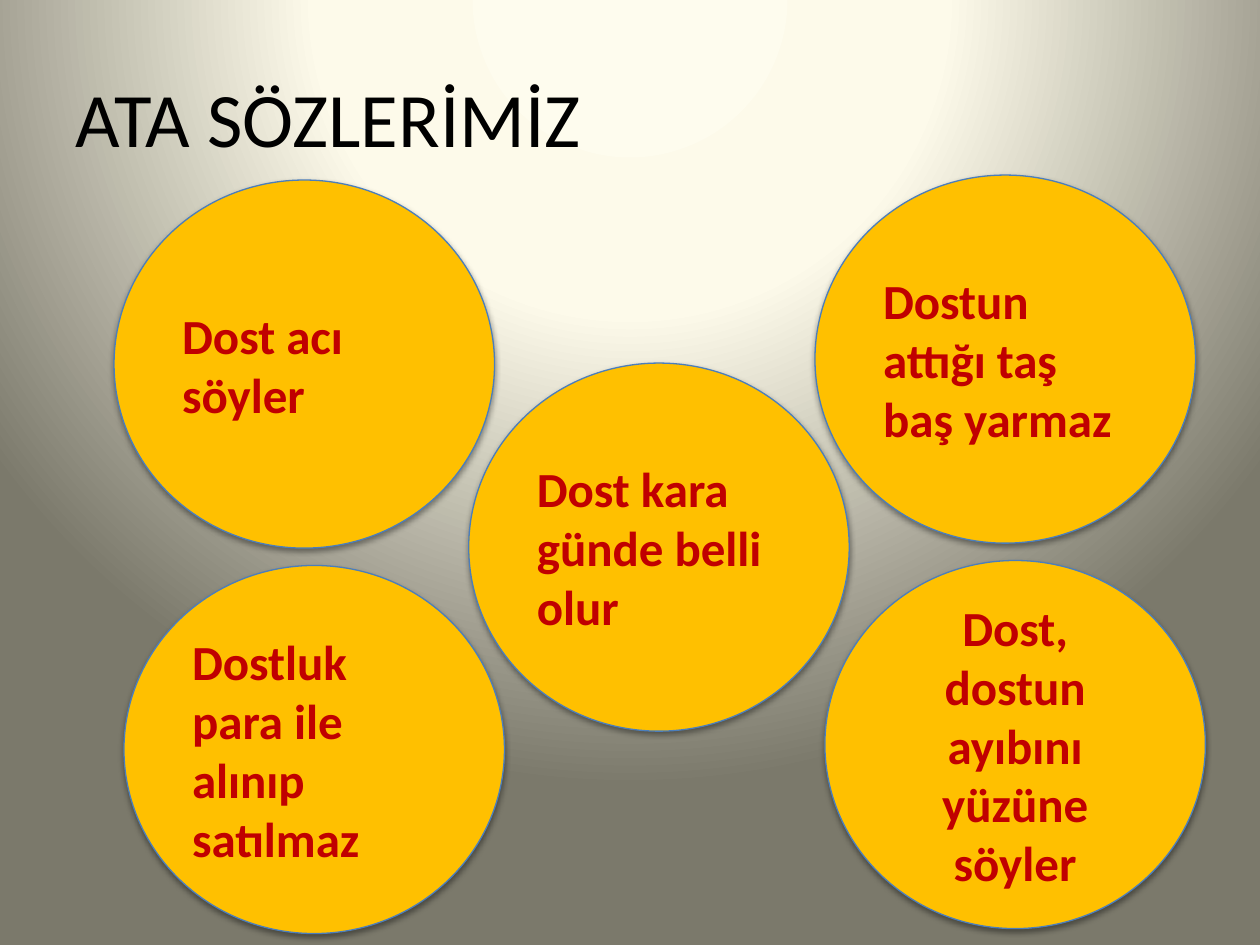
from dataclasses import dataclass

from lxml.etree import SubElement
from pptx import Presentation
from pptx.dml.color import RGBColor
from pptx.enum.shapes import MSO_SHAPE
from pptx.enum.text import MSO_ANCHOR, PP_ALIGN
from pptx.oxml.ns import qn
from pptx.util import Cm, Pt


@dataclass(frozen=True)
class Theme:
    font: str = "Calibri"
    title_size: int = 44
    saying_size: int = 28
    title: str = "000000"
    saying: str = "C00000"
    circle: str = "FFC000"
    outline: str = "4B7EBC"
    shadow: str = "000000"
    glow: tuple = ((0, "FEFCEE"), (40, "FDFAEA"), (100, "7B796B"))


THEME = Theme()
CIRCLE_W, CIRCLE_H = 7.67, 7.42
ROW_DX, ROW_DY = 0.2, 7.77  # lower circle relative to the upper one


def add_node(parent, tag, **attrs):
    return SubElement(parent, qn(tag), {k: str(v) for k, v in attrs.items()})


def add_run(p, text, size, color, bold=False):
    r = p.add_run()
    r.text = text
    r.font.name = THEME.font
    r.font.size = Pt(size)
    r.font.bold = bold
    r.font.color.rgb = RGBColor.from_string(color)


def paint_background(s):
    """Fill the slide with a circular glow centred above its top edge."""
    s.background.fill.gradient()
    grad = s.element.find(".//" + qn("a:gradFill"))
    for child in list(grad):
        grad.remove(child)
    stops = add_node(grad, "a:gsLst")
    for pos, color in THEME.glow:
        stop = add_node(stops, "a:gs", pos=pos * 1000)
        add_node(stop, "a:srgbClr", val=color)
    circle = add_node(grad, "a:path", path="circle")
    add_node(circle, "a:fillToRect", l=50000, t=-80000, r=50000, b=180000)


def add_title(s, text, x, y, w, h):
    sp = s.shapes.title
    sp.left, sp.top, sp.width, sp.height = Cm(x), Cm(y), Cm(w), Cm(h)
    tf = sp.text_frame
    tf.vertical_anchor = MSO_ANCHOR.MIDDLE
    p = tf.paragraphs[0]
    p.alignment = PP_ALIGN.LEFT
    add_run(p, text, THEME.title_size, THEME.title)


def add_soft_shadow(sp):
    sp.shadow.inherit = False
    effects = sp.element.spPr.find(qn("a:effectLst"))
    shadow = add_node(effects, "a:outerShdw", blurRad=Pt(3.1), dist=Pt(1.6),
                      dir=90 * 60000, rotWithShape=0)
    color = add_node(shadow, "a:srgbClr", val=THEME.shadow)
    add_node(color, "a:alpha", val=38000)


def add_saying(s, text, x, y, align=PP_ALIGN.LEFT):
    sp = s.shapes.add_shape(MSO_SHAPE.OVAL, Cm(x), Cm(y), Cm(CIRCLE_W), Cm(CIRCLE_H))
    sp.fill.solid()
    sp.fill.fore_color.rgb = RGBColor.from_string(THEME.circle)
    sp.line.color.rgb = RGBColor.from_string(THEME.outline)
    sp.line.width = Pt(0.75)
    add_soft_shadow(sp)
    tf = sp.text_frame
    tf.word_wrap = True
    tf.vertical_anchor = MSO_ANCHOR.MIDDLE
    p = tf.paragraphs[0]
    p.alignment = align
    add_run(p, text, THEME.saying_size, THEME.saying, bold=True)


def add_sayings(s, left, right, middle):
    """Place two columns of circles and one between them, from their top-left corners."""
    (lx, ly), (rx, ry) = left, right
    add_saying(s, "Dostluk para ile alınıp satılmaz", lx + ROW_DX, ly + ROW_DY)
    add_saying(s, "Dost acı söyler", lx, ly)
    add_saying(s, "Dostun attığı taş baş yarmaz", rx, ry)
    add_saying(s, "Dost kara günde belli olur", *middle)
    add_saying(s, "Dost, dostun ayıbını yüzüne söyler", rx + ROW_DX, ry + ROW_DY,
               PP_ALIGN.CENTER)


def main():
    prs = Presentation()
    prs.slide_width, prs.slide_height = Cm(25.4), Cm(19.05)
    s = prs.slides.add_slide(prs.slide_layouts[5])
    paint_background(s)
    add_title(s, "ATA SÖZLERİMİZ", 1.27, 0.76, 22.86, 3.18)
    add_sayings(s, left=(2.3, 3.63), right=(16.43, 3.53), middle=(9.45, 7.32))
    prs.save("out.pptx")


if __name__ == "__main__":
    main()
